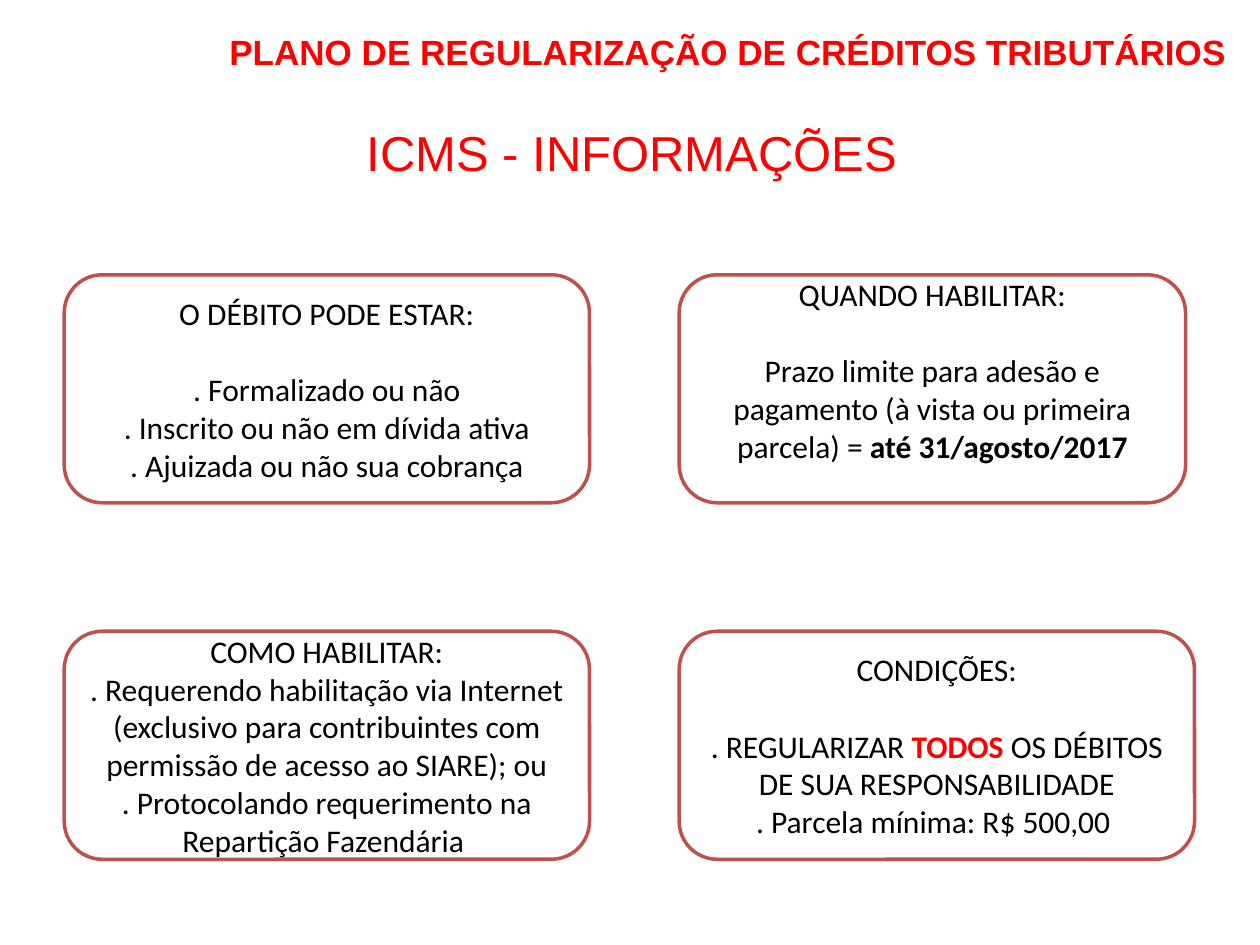
from typing import NamedTuple

from pptx import Presentation
from pptx.dml.color import RGBColor
from pptx.enum.shapes import MSO_SHAPE as Shape
from pptx.enum.text import MSO_ANCHOR as Anchor, PP_ALIGN as Align
from pptx.util import Pt

RED, BLACK, WHITE, BORDER = "FF0000", "000000", "FFFFFF", "C0504D"
BODY = {"name": "Calibri", "size": Pt(18), "bold": False}
BLANK_LINE = 22  # height of one line of body text
INSET = 3.6

COLUMNS = (36.7, 388.1)
ROWS = (157, 360.7)
CARD_HEIGHT = 130.3


class Run(NamedTuple):
    text: str
    bold: bool = False
    color: str = BLACK


class Line(NamedTuple):
    runs: tuple[Run, ...]
    gap: float = 0


class Card(NamedTuple):
    column: int
    row: int
    width: float
    lines: tuple[Line, ...]
    room_below: float = 0


def rgb(value: str) -> RGBColor:
    return RGBColor.from_string(value)


def add_run(paragraph, text: str, font_format: dict, color: str) -> None:
    run = paragraph.add_run()
    run.text = text
    for attribute, value in font_format.items():
        setattr(run.font, attribute, value)
    run.font.color.rgb = rgb(color)


def add_heading(slide, text: str, box: tuple, anchor, align, font_format: dict) -> None:
    frame = slide.shapes.add_textbox(*map(Pt, box)).text_frame
    frame.word_wrap = True
    frame.vertical_anchor = anchor
    frame.paragraphs[0].alignment = align
    add_run(frame.paragraphs[0], text, font_format, RED)


def add_card(slide, card: Card) -> None:
    box = (COLUMNS[card.column], ROWS[card.row], card.width, CARD_HEIGHT)
    outline = slide.shapes.add_shape(Shape.ROUNDED_RECTANGLE, *map(Pt, box))
    outline.shadow.inherit = False
    outline.fill.solid()
    outline.fill.fore_color.rgb = rgb(WHITE)
    outline.line.color.rgb = rgb(BORDER)
    outline.line.width = Pt(2)

    frame = outline.text_frame
    frame.word_wrap = True
    frame.vertical_anchor = Anchor.MIDDLE
    frame.margin_bottom = Pt(INSET + card.room_below)
    for index, line in enumerate(card.lines):
        paragraph = frame.add_paragraph() if index else frame.paragraphs[0]
        paragraph.alignment = Align.CENTER
        if line.gap:
            paragraph.space_before = Pt(line.gap)
        for run in line.runs:
            add_run(paragraph, run.text, BODY | {"bold": run.bold}, run.color)


def plain(text: str, gap: float = 0) -> Line:
    return Line((Run(text),), gap)


CARDS = (
    Card(0, 0, 300.2, (
        plain("O DÉBITO PODE ESTAR:"),
        plain(". Formalizado ou não", BLANK_LINE),
        plain(". Inscrito ou não em dívida ativa"),
        plain(". Ajuizada ou não sua cobrança"),
    )),
    Card(0, 1, 300.2, (
        plain("COMO HABILITAR:"),
        plain(". Requerendo habilitação via Internet (exclusivo para "
              "contribuintes com permissão de acesso ao SIARE); ou"),
        plain(". Protocolando requerimento na Repartição Fazendária "),
    )),
    Card(1, 0, 289.4, (
        plain("QUANDO HABILITAR:"),
        Line((
            Run("Prazo limite para adesão e pagamento (à vista ou primeira parcela) = "),
            Run("até 31/agosto/2017", bold=True),
        ), BLANK_LINE),
    ), room_below=BLANK_LINE),
    Card(1, 1, 294.5, (
        plain("CONDIÇÕES:"),
        Line((
            Run(". REGULARIZAR "),
            Run("TODOS", bold=True, color=RED),
            Run(" OS DÉBITOS DE SUA RESPONSABILIDADE"),
        ), BLANK_LINE),
        plain(". Parcela mínima: R$ 500,00 "),
    )),
)


def main() -> None:
    deck = Presentation()
    deck.slide_width, deck.slide_height = Pt(720), Pt(540)
    slide = deck.slides.add_slide(deck.slide_layouts[6])

    # Headings
    add_heading(slide, "PLANO DE REGULARIZAÇÃO DE CRÉDITOS TRIBUTÁRIOS",
                (59.8, 3.6, 648, 51.1), Anchor.MIDDLE, Align.RIGHT,
                {"name": "Arial", "size": Pt(20), "bold": True})
    add_heading(slide, "ICMS - INFORMAÇÕES",
                (14.4, 66.2, 693.4, 459.4), Anchor.TOP, Align.CENTER,
                {"name": "Arial", "size": Pt(28), "bold": False})

    # Information cards
    for card in CARDS:
        add_card(slide, card)

    deck.save("out.pptx")


if __name__ == "__main__":
    main()
